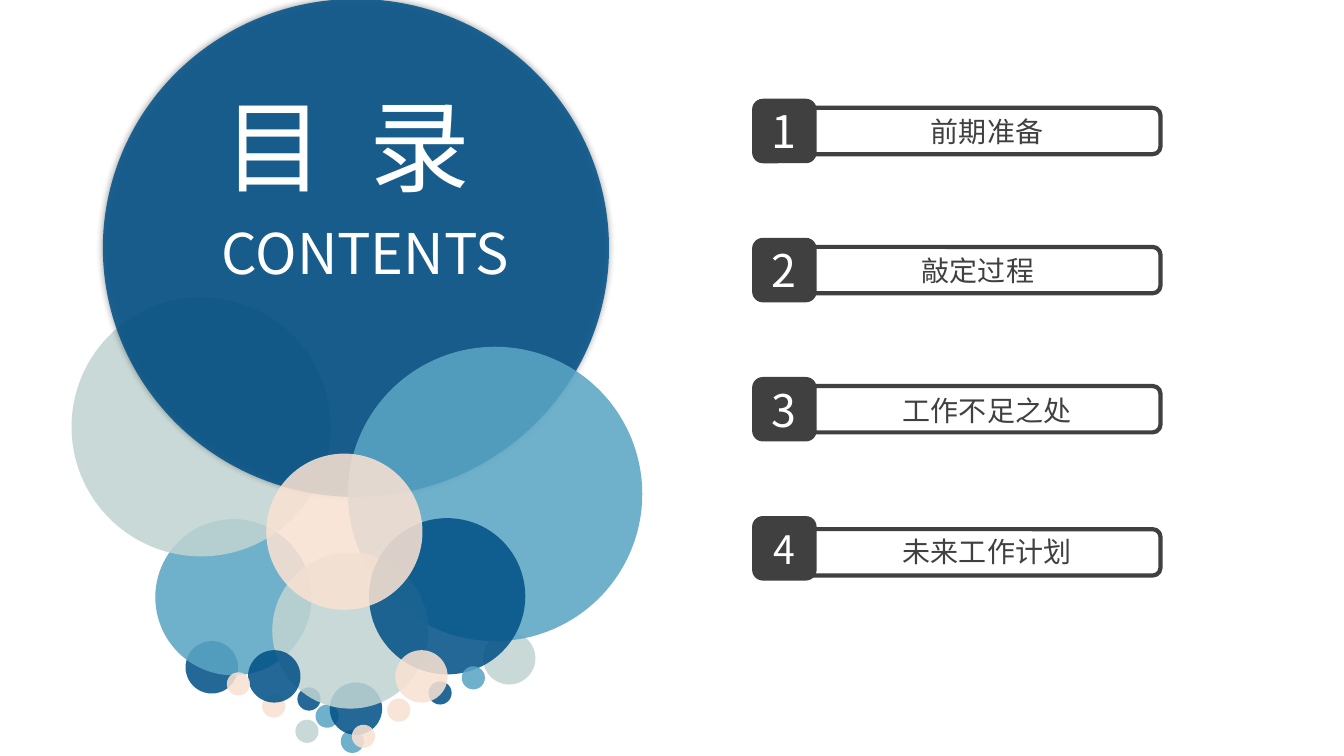
from dataclasses import dataclass

from lxml.etree import SubElement
from pptx import Presentation
from pptx.dml.color import RGBColor
from pptx.enum.shapes import MSO_SHAPE
from pptx.enum.text import MSO_ANCHOR, MSO_AUTO_SIZE, PP_ALIGN
from pptx.oxml.ns import qn
from pptx.util import Inches, Pt

FONT = "Noto Sans CJK SC"
NAVY, SKY, SAGE, PEACH = "035287", "5AA5C4", "C0D4D2", "F9E2D2"
GRAY, WHITE = "404040", "FFFFFF"
TINY, SMALL, LARGE = 0.23, 0.52, 1.55
TOP, STEP = 0.98, 1.38


@dataclass
class Ball:
    left: float
    top: float
    size: float
    hue: str
    high: float = 0
    glow: bool = False


@dataclass
class Item:
    text: str
    left: float = 8.1
    drop: float = 0.11
    frame: float = 0.09
    size: int = 32


BALLS = [
    Ball(3.38, 7.24, TINY, SKY),
    Ball(3.13, 6.99, TINY, SKY),
    Ball(2.95, 6.82, TINY, NAVY),
    Ball(2.6, 6.89, TINY, PEACH),
    Ball(4.25, 6.76, TINY, NAVY),
    Ball(4.79, 6.27, SMALL, SAGE),
    Ball(3.27, 6.77, SMALL, NAVY),
    Ball(1.84, 6.36, SMALL, NAVY),
    Ball(1.54, 5.15, LARGE, SKY),
    Ball(0.71, 2.95, 2.57, SAGE),
    Ball(1.02, -0.01, 5.02, NAVY, high=4.94, glow=True),
    Ball(3.45, 3.44, 2.92, SKY),
    Ball(2.7, 5.48, LARGE, SAGE),
    Ball(3.66, 5.14, LARGE, NAVY),
    Ball(2.64, 4.5, LARGE, PEACH),
    Ball(2.46, 6.45, SMALL, NAVY),
    Ball(3.92, 6.45, SMALL, PEACH),
    Ball(2.25, 6.67, TINY, PEACH),
    Ball(3.84, 6.93, TINY, PEACH),
    Ball(4.58, 6.61, TINY, SKY),
    Ball(2.93, 7.14, TINY, SAGE),
    Ball(3.49, 7.19, TINY, PEACH),
]

ITEMS = [
    Item("前期准备"),
    Item("敲定过程", left=8.01),
    Item("工作不足之处"),
    Item("未来工作计划", drop=0.13, frame=0.13, size=28),
]


def paint(part, hue: str) -> None:
    part.solid()
    part.fore_color.rgb = RGBColor.from_string(hue)


def write(shape, text: str, *, size: int, hue: str = WHITE, align=PP_ALIGN.LEFT,
          anchor=MSO_ANCHOR.TOP, grow: bool = True, gap: int = 0) -> None:
    frame = shape.text_frame
    frame.word_wrap = True
    frame.auto_size = MSO_AUTO_SIZE.SHAPE_TO_FIT_TEXT if grow else MSO_AUTO_SIZE.NONE
    frame.vertical_anchor = anchor
    para = frame.paragraphs[0]
    para.alignment = align
    run = para.add_run()
    run.text = text
    run.font.size = Pt(size)
    run.font.name = FONT
    paint(run.font.fill, hue)
    for props in shape.element.iter(qn("a:rPr")):
        SubElement(props, qn("a:ea"), typeface=FONT)
        if gap:
            props.set("spc", str(gap * 100))


def form(shapes, kind, left: float, top: float, wide: float, high: float):
    shape = shapes.add_shape(kind, Inches(left), Inches(top), Inches(wide), Inches(high))
    shape.shadow.inherit = False
    shape.line.fill.background()
    return shape


def label(shapes, left: float, top: float, wide: float, high: float):
    return shapes.add_textbox(Inches(left), Inches(top), Inches(wide), Inches(high))


def draw_ball(shapes, ball: Ball) -> None:
    shape = form(shapes, MSO_SHAPE.OVAL, ball.left, ball.top, ball.size, ball.high or ball.size)
    paint(shape.fill, ball.hue)
    tint = shape.element.spPr.find(qn("a:solidFill")).find(qn("a:srgbClr"))
    SubElement(tint, qn("a:alpha"), val="87000")
    if ball.glow:
        effects = shape.element.spPr.find(qn("a:effectLst"))
        shade = SubElement(effects, qn("a:outerShdw"), blurRad=str(Pt(5)), dist="0",
                           dir="0", algn="ctr", rotWithShape="0")
        black = SubElement(shade, qn("a:srgbClr"), val="000000")
        SubElement(black, qn("a:alpha"), val="40000")


def draw_item(shapes, rank: int, item: Item) -> None:
    top = TOP + STEP * rank
    group = shapes.add_group_shape().shapes
    badge = form(group, MSO_SHAPE.ROUNDED_RECTANGLE, 7.46, top, 0.64, 0.64)
    paint(badge.fill, GRAY)
    write(badge, str(rank + 1), size=item.size, align=PP_ALIGN.CENTER,
          anchor=MSO_ANCHOR.MIDDLE, grow=False)
    write(label(group, item.left, top + item.drop, 3.38, 0.44), item.text,
          size=20, hue=GRAY, align=PP_ALIGN.CENTER)
    frame = form(group, MSO_SHAPE.ROUNDED_RECTANGLE, 7.9, top + item.frame, 3.61, 0.46)
    frame.fill.background()
    paint(frame.line.fill, GRAY)
    frame.line.width = Pt(3)


def main() -> None:
    deck = Presentation()
    deck.slide_width, deck.slide_height = Inches(13.33), Inches(7.5)
    slide = deck.slides.add_slide(deck.slide_layouts[5])
    shapes = slide.shapes
    title = shapes.title
    for ball in BALLS:
        draw_ball(shapes, ball)
    title.left, title.top = Inches(2.12), Inches(0.78)
    title.width, title.height = Inches(3.2), Inches(1.31)
    write(title, "目 录", size=72, gap=8)
    title.element.getparent().append(title.element)
    write(label(shapes, 2.1, 2.12, 3.48, 0.77), "CONTENTS", size=40)
    for rank, item in enumerate(ITEMS):
        draw_item(shapes, rank, item)
    deck.save("out.pptx")


if __name__ == "__main__":
    main()
